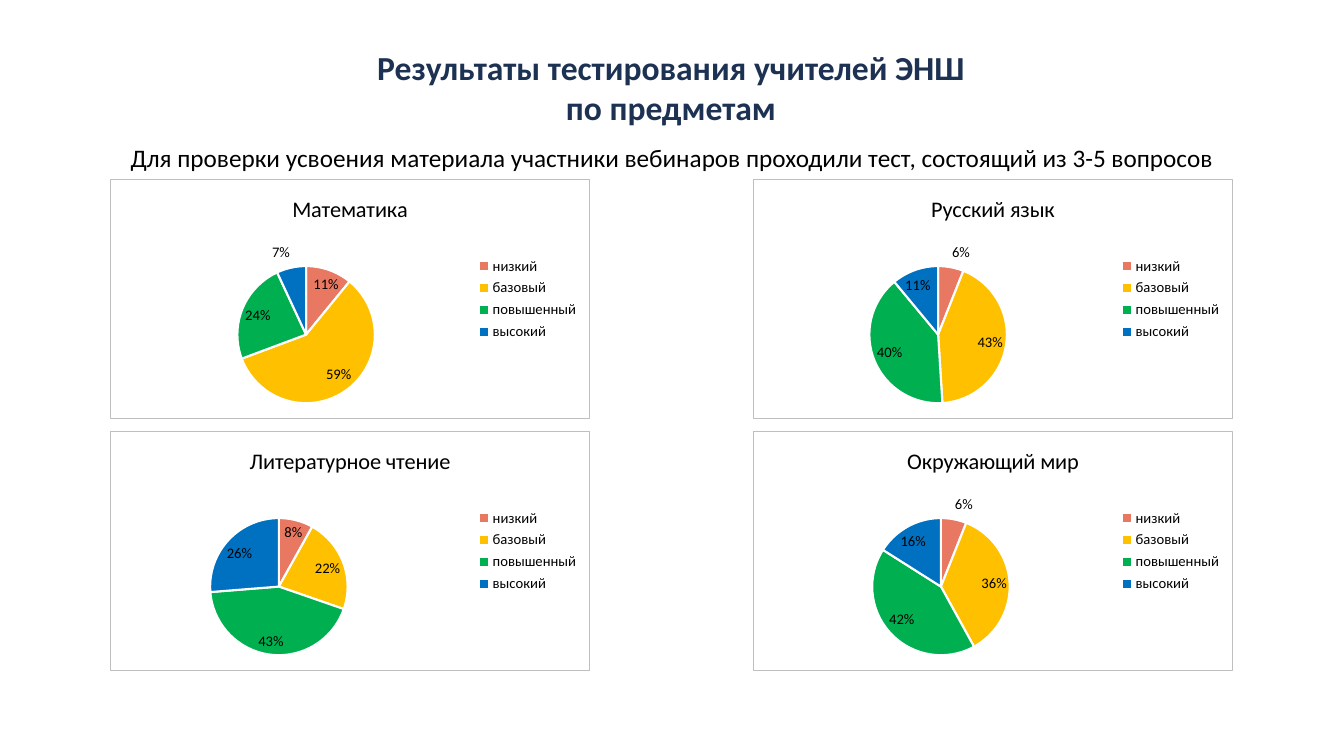
from dataclasses import dataclass

from lxml import etree
from pptx import Presentation
from pptx import util as u
from pptx.chart.data import CategoryChartData
from pptx.dml.color import RGBColor
from pptx.enum import chart as ch, text
from pptx.oxml import parse_xml
from pptx.oxml.ns import nsdecls, qn

HEADING = ["Результаты тестирования учителей ЭНШ", "по предметам"]
INTRO = ["Для проверки усвоения материала участники вебинаров проходили тест, состоящий из 3-5 вопросов"]
LEVELS = ["низкий", "базовый", "повышенный", "высокий"]
SUBJECTS = [
    ("Математика", [11, 59, 24, 7], 196),
    ("Русский язык", [6, 43, 40, 11], 185),
    ("Литературное чтение", [8, 22, 43, 26], 169),
    ("Окружающий мир", [6, 36, 42, 16], 188),
]


@dataclass(frozen=True)
class Theme:
    face: str = "Calibri"
    heading: str = "1D3152"
    ink: str = "000000"
    border: str = "BFBFBF"
    gap: str = "FFFFFF"
    levels: tuple = ("E87862", "FFC000", "00B050", "0070C0")
    heading_size: float = 24
    intro_size: float = 18
    subject_size: float = 16
    label_size: float = 10.5


THEME = Theme()
SLIDE = (1344, 756)
HEADING_BOX = (315, 41, 712, 92)
INTRO_BOX = (60, 141, 1224, 37)
CARD = (480, 240)
FIRST_CARD = (110, 179)
CARD_PITCH = (643, 252)
PIE_TOP, PIE_SIZE = 87, 138


def px(length):
    return u.Inches(length / 100.8)


def assign(target, values):
    for name, value in values.items():
        setattr(target, name, value)


def style_font(font, size, color, bold=False):
    assign(font, {"name": THEME.face, "size": u.Pt(size), "bold": bold})
    font.color.rgb = RGBColor.from_string(color)


def fill_placeholder(holder, box, lines, size, color, bold, spacing):
    assign(holder, dict(zip(("left", "top", "width", "height"), map(px, box))))
    frame = holder.text_frame
    assign(frame, {
        "word_wrap": True, "auto_size": text.MSO_AUTO_SIZE.NONE,
        "vertical_anchor": text.MSO_ANCHOR.MIDDLE,
        "margin_top": px(5), "margin_bottom": px(5),
        "margin_left": px(5), "margin_right": px(5),
    })
    frame.text = "\n".join(lines)
    for line in frame.paragraphs:
        props = line._p.get_or_add_pPr()
        props.set("marL", "0")
        props.set("indent", "0")
        etree.SubElement(props, qn("a:buNone"))
        assign(line, {"alignment": text.PP_ALIGN.CENTER, "line_spacing": spacing,
                      "space_before": u.Pt(0), "space_after": u.Pt(0)})
        style_font(line.runs[0].font, size, color, bold)


def place_pie(chart, center):
    plot_area = chart._chartSpace.chart.plotArea
    for old in plot_area.findall(qn("c:layout")):
        plot_area.remove(old)
    layout = etree.Element(qn("c:layout"))
    manual = etree.SubElement(layout, qn("c:manualLayout"))
    settings = {
        "layoutTarget": "inner", "xMode": "edge", "yMode": "edge",
        "x": round((center - PIE_SIZE / 2) / CARD[0], 3),
        "y": round(PIE_TOP / CARD[1], 3),
        "w": round(PIE_SIZE / CARD[0], 3),
        "h": round(PIE_SIZE / CARD[1], 3),
    }
    for tag, value in settings.items():
        etree.SubElement(manual, qn("c:" + tag)).set("val", str(value))
    plot_area.insert(0, layout)


def frame_card(chart):
    chart._chartSpace.chart.addnext(parse_xml(
        f'<c:spPr {nsdecls("c", "a")}><a:noFill/><a:ln w="{u.Pt(0.75)}"><a:solidFill>'
        f'<a:srgbClr val="{THEME.border}"/></a:solidFill></a:ln></c:spPr>'))


def add_subject(slide, index, subject, shares, center):
    row, column = divmod(index, 2)
    left = FIRST_CARD[0] + column * CARD_PITCH[0]
    top = FIRST_CARD[1] + row * CARD_PITCH[1]
    data = CategoryChartData(number_format='0"%"')
    data.categories = LEVELS
    data.add_series(subject, shares)
    chart = slide.shapes.add_chart(
        ch.XL_CHART_TYPE.PIE, px(left), px(top), px(CARD[0]), px(CARD[1]), data).chart
    style_font(chart.font, THEME.label_size, THEME.ink)
    frame_card(chart)
    place_pie(chart, center)

    assign(chart, {"has_title": True, "has_legend": True})
    chart.chart_title.include_in_layout = False
    caption = chart.chart_title.text_frame
    caption.text = subject
    style_font(caption.paragraphs[0].runs[0].font, THEME.subject_size, THEME.ink)
    assign(chart.legend, {"position": ch.XL_LEGEND_POSITION.RIGHT, "include_in_layout": False})
    style_font(chart.legend.font, THEME.label_size, THEME.ink)

    pie = chart.plots[0]
    assign(pie, {"vary_by_categories": True, "has_data_labels": True})
    assign(pie.data_labels, {
        "show_value": True, "show_percentage": False,
        "number_format": '0"%"', "number_format_is_linked": False,
        "position": ch.XL_LABEL_POSITION.BEST_FIT,
    })
    style_font(pie.data_labels.font, THEME.label_size, THEME.ink)
    for level, color in enumerate(THEME.levels):
        slice_format = pie.series[0].points[level].format
        slice_format.fill.solid()
        slice_format.fill.fore_color.rgb = RGBColor.from_string(color)
        slice_format.line.color.rgb = RGBColor.from_string(THEME.gap)
        slice_format.line.width = u.Pt(1.5)


def main():
    deck = Presentation()
    assign(deck, {"slide_width": px(SLIDE[0]), "slide_height": px(SLIDE[1])})
    slide = deck.slides.add_slide(deck.slide_layouts[1])
    heading, intro = slide.placeholders
    fill_placeholder(heading, HEADING_BOX, HEADING, THEME.heading_size, THEME.heading, True, 1.0)
    fill_placeholder(intro, INTRO_BOX, INTRO, THEME.intro_size, THEME.ink, False, 0.9)
    for index, (subject, shares, center) in enumerate(SUBJECTS):
        add_subject(slide, index, subject, shares, center)
    deck.save("out.pptx")


if __name__ == "__main__":
    main()
